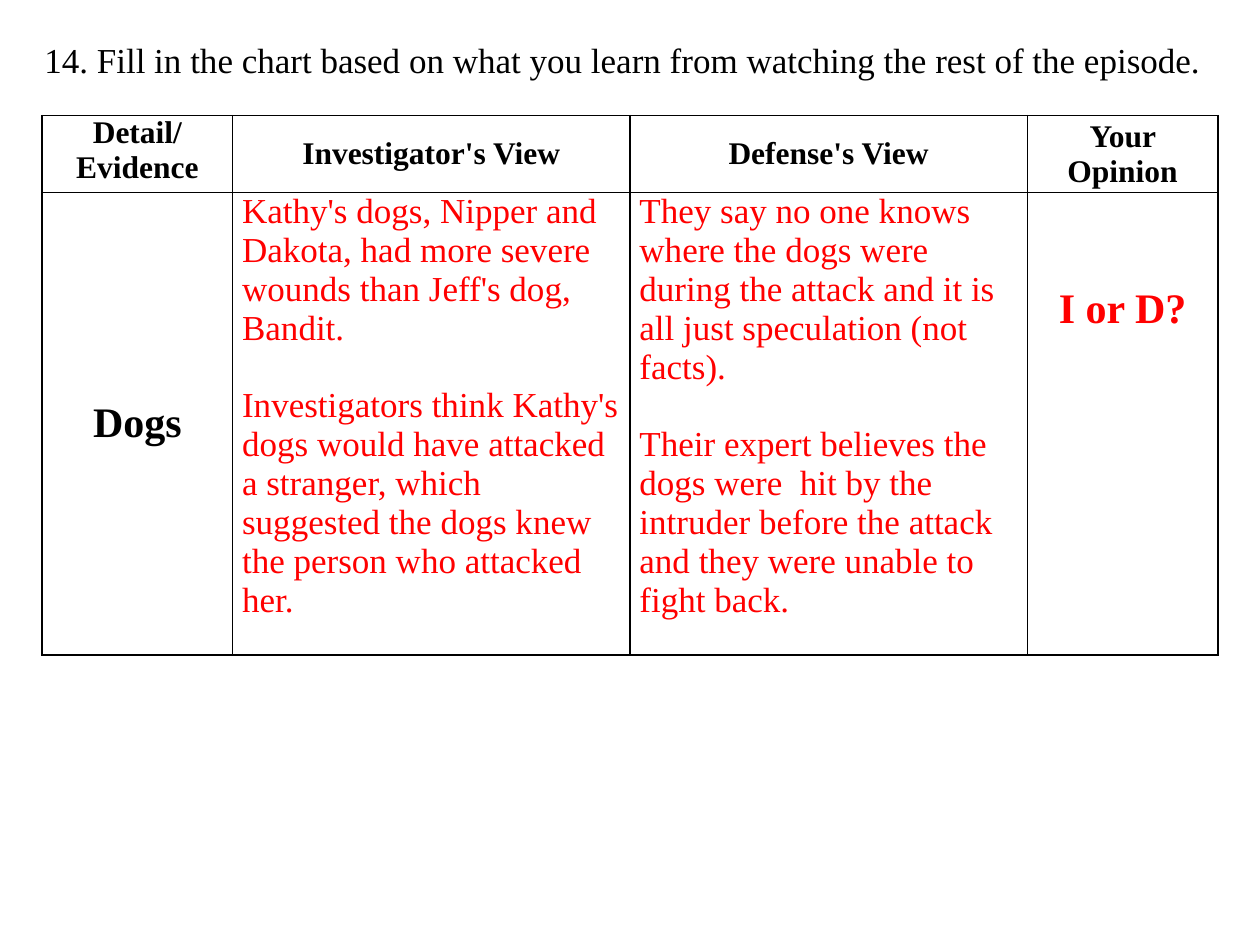
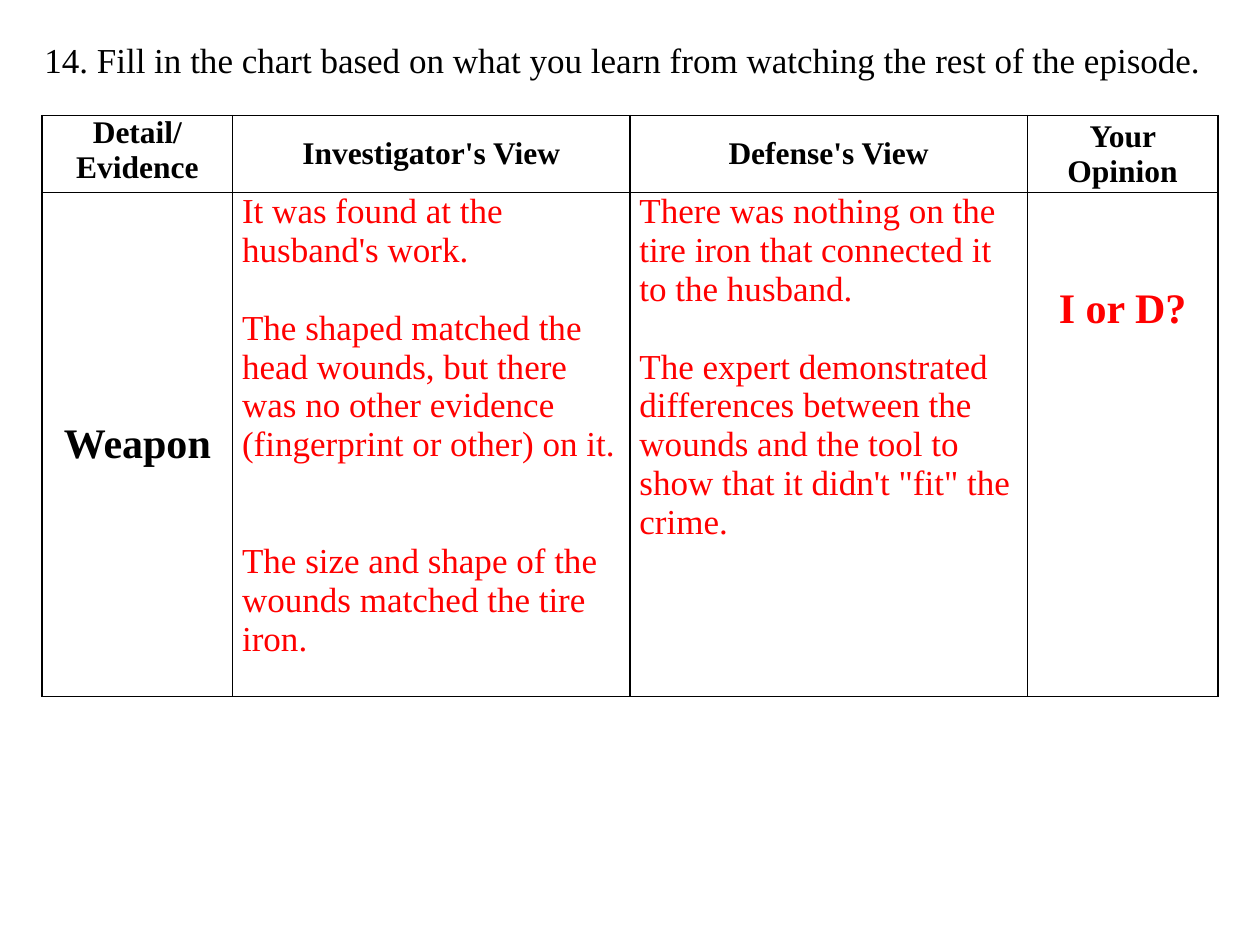
from lxml import etree
from pptx import Presentation
from pptx.dml.color import RGBColor
from pptx.enum.text import MSO_ANCHOR, MSO_AUTO_SIZE, PP_ALIGN
from pptx.oxml.ns import qn
from pptx.util import Cm, Pt

TOP, MID = MSO_ANCHOR.TOP, MSO_ANCHOR.MIDDLE
LEFT, CENTER = PP_ALIGN.LEFT, PP_ALIGN.CENTER
FIXED = MSO_AUTO_SIZE.NONE

FONT = "Times New Roman"
COLORS = {"ink": "000000", "answer": "FF0000"}
TITLE = "14. Fill in the chart based on what you learn from watching the rest of the episode."
HEADS = ["Detail/\vEvidence", "Investigator's View", "Defense's View", "Your Opinion"]
VOTE = "I or D?"

# Boxes in cm: left, top, width, height
TITLE_BOX = (0.64, 0.64, 24.16, 1.12)
TABLE_BOX = (0.85, 2.33, 23.7)
SIDE = 3.84  # width of the two outer columns
HEAD = 1.55  # height of the header row
PAD = 0.19
DROP = 1.88  # space above the vote
LINE = 22.2  # points in one line of answer text

# Each answer: blank lines above it, then its text
TOPICS = [
    {
        "name": "Dogs",
        "height": 9.32,
        "police": [
            (0, "Kathy's dogs, Nipper and Dakota, had more severe wounds than Jeff's dog, Bandit."),
            (1, "Investigators think Kathy's dogs would have attacked a stranger, "
                "which suggested the dogs knew the person who attacked her."),
        ],
        "defense": [
            (0, "They say no one knows where the dogs were during the attack "
                "and it is all just speculation (not facts)."),
            (1, "Their expert believes the dogs were  hit by the intruder "
                "before the attack and they were unable to fight back."),
        ],
    },
    {
        "name": "Weapon",
        "height": 10.16,
        "police": [
            (0, "It was found at the husband's work."),
            (1, "The shaped matched the head wounds, but there was no other "
                "evidence (fingerprint or other) on it."),
            (2, "The size and shape of the wounds matched the tire iron."),
        ],
        "defense": [
            (0, "There was nothing on the tire iron that connected it to the husband."),
            (1, "The expert demonstrated differences between the wounds and "
                "the tool to show that it didn't \"fit\" the crime."),
        ],
    },
]


def style(frame, size, color="ink", bold=False, align=LEFT):
    """Format every run in a text frame."""
    for para in frame.paragraphs:
        para.alignment = align
        for run in para.runs:
            font = run.font
            font.name, font.size, font.bold = FONT, Pt(size), bold
            font.color.rgb = RGBColor.from_string(COLORS[color])


def border(cell):
    """Draw a thin line on all four sides of a cell."""
    props = cell._tc.get_or_add_tcPr()
    for spot, side in enumerate(("a:lnL", "a:lnR", "a:lnT", "a:lnB")):
        line = etree.Element(qn(side), w=str(Pt(1)))
        fill = etree.SubElement(line, qn("a:solidFill"))
        etree.SubElement(fill, qn("a:srgbClr"), val=COLORS["ink"])
        props.insert(spot, line)


def fill_cell(cell, text, size, anchor=MID, drop=0, **look):
    cell.text_frame.text = text
    cell.fill.background()
    cell.vertical_anchor = anchor
    cell.margin_left = cell.margin_right = Cm(PAD)
    cell.margin_top, cell.margin_bottom = Cm(drop), 0
    style(cell.text_frame, size, **look)
    border(cell)


def fill_view(cell, notes):
    """Write one side's answers, spaced by whole lines."""
    text = "\n".join(note for _, note in notes)
    fill_cell(cell, text, 20, TOP, color="answer")
    for para, (gap, _) in zip(cell.text_frame.paragraphs, notes):
        para.space_before = Pt(gap * LINE)


def add_title(slide, box):
    title = slide.shapes.title
    title.left, title.top, title.width, title.height = map(Cm, box)
    frame = title.text_frame
    frame.text = TITLE
    frame.word_wrap = True
    frame.auto_size = FIXED
    frame.vertical_anchor = MID
    style(frame, 20)


def add_grid(slide, box, topic):
    left, top, width = box
    tall = topic["height"]
    grid = slide.shapes.add_table(
        2, len(HEADS), Cm(left), Cm(top), Cm(width), Cm(HEAD + tall)).table
    grid.first_row = grid.horz_banding = False
    wide = width / 2 - SIDE
    for col, size in zip(grid.columns, (SIDE, wide, wide, SIDE)):
        col.width = Cm(size)
    for row, size in zip(grid.rows, (HEAD, tall)):
        row.height = Cm(size)

    # Header row
    for col, head in enumerate(HEADS):
        anchor = MID if col else TOP
        fill_cell(grid.cell(0, col), head, 18, anchor, bold=True, align=CENTER)

    # Topic row
    fill_cell(grid.cell(1, 0), topic["name"], 24, bold=True, align=CENTER)
    fill_view(grid.cell(1, 1), topic["police"])
    fill_view(grid.cell(1, 2), topic["defense"])
    fill_cell(grid.cell(1, 3), VOTE, 24, TOP, DROP,
              color="answer", bold=True, align=CENTER)


def main():
    deck = Presentation()
    deck.slide_width, deck.slide_height = Cm(25.4), Cm(19.05)
    for topic in TOPICS:
        slide = deck.slides.add_slide(deck.slide_layouts[5])
        add_grid(slide, TABLE_BOX, topic)
        add_title(slide, TITLE_BOX)
    deck.save("out.pptx")


if __name__ == "__main__":
    main()
